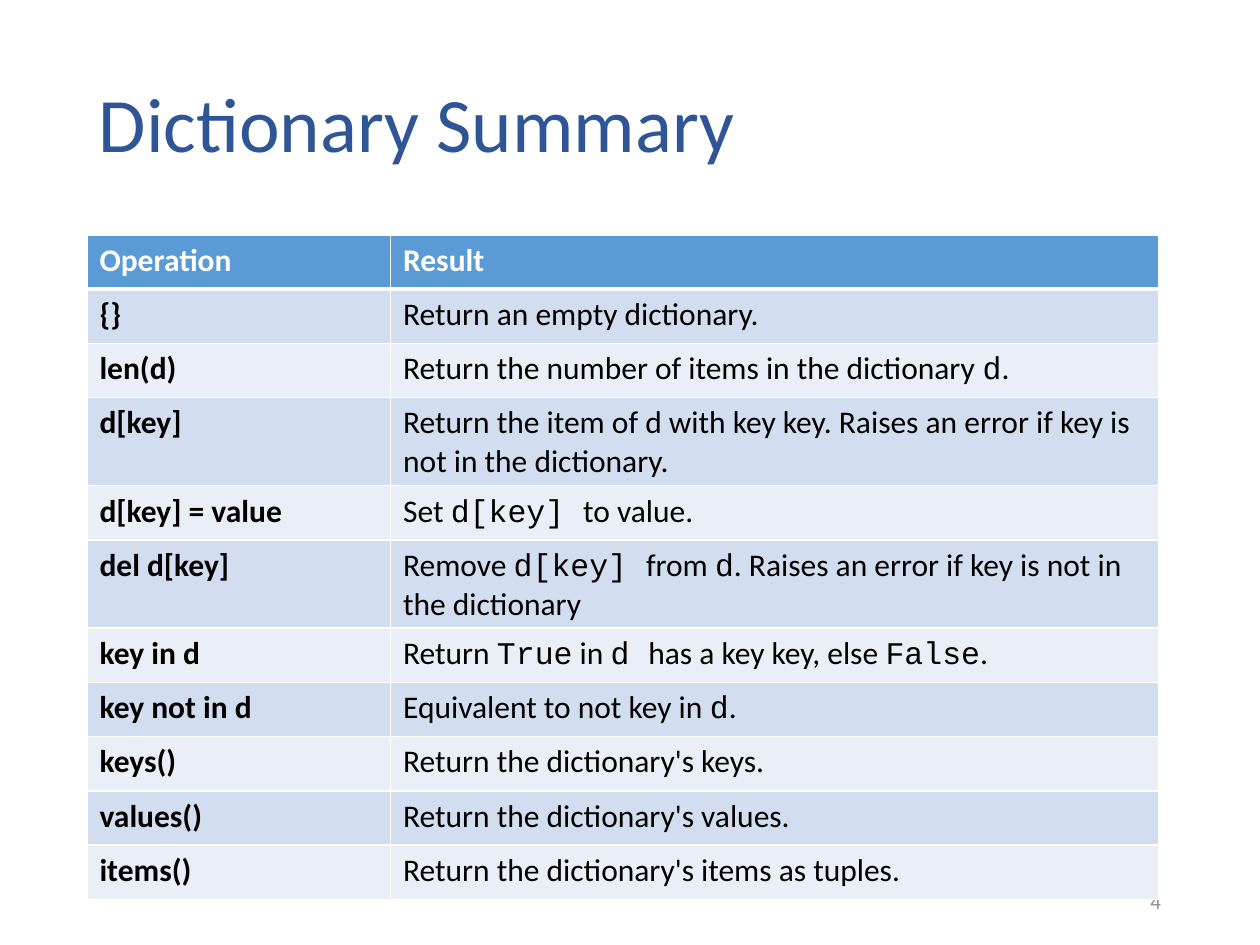
from lxml import etree
from pptx import Presentation
from pptx.dml.color import RGBColor
from pptx.enum.text import MSO_ANCHOR, PP_ALIGN
from pptx.oxml.ns import qn
from pptx.util import Pt

MIDDLE = MSO_ANCHOR.MIDDLE
LEFT, RIGHT = PP_ALIGN.LEFT, PP_ALIGN.RIGHT

WHITE = RGBColor(0xFF, 0xFF, 0xFF)
BLACK = RGBColor(0, 0, 0)
TITLE_BLUE = RGBColor(0x2F, 0x55, 0x97)
GRAY = RGBColor(0x8C, 0x8C, 0x8C)
HEADER_BLUE = RGBColor(0x5B, 0x9B, 0xD5)
BAND_DARK = RGBColor(0xD2, 0xDE, 0xEF)
BAND_LIGHT = RGBColor(0xEA, 0xEF, 0xF7)

BODY_FONT = "Calibri"
CODE_FONT = "Courier New"
COLUMN_WIDTHS = (173.5, 439.2)
ROW_HEIGHT = 31
THIN, THICK = 1, 3

# Text between backticks is set in the code font.
ROWS = [
    ("Operation", "Result"),
    ("{}", "Return an empty dictionary."),
    ("len(d)", "Return the number of items in the dictionary `d`."),
    ("d[key]", "Return the item of d with key key. Raises an error if key is "
               "not in the dictionary."),
    ("d[key] = value", "Set `d[key] `to value."),
    ("del d[key]", "Remove `d[key] `from `d`. Raises an error if key is not in "
                   "the dictionary"),
    ("key in d", "Return `True` in `d `has a key key, else `False`."),
    ("key not in d", "Equivalent to not key in `d`."),
    ("keys()", "Return the dictionary's keys."),
    ("values()", "Return the dictionary's values."),
    ("items()", "Return the dictionary's items as tuples."),
]


def add_runs(p, text, size, color, bold=False):
    """Add text to p, switching to the code font between backticks."""
    for i, part in enumerate(text.split("`")):
        if part:
            r = p.add_run()
            r.text = part
            r.font.name = CODE_FONT if i % 2 else BODY_FONT
            r.font.size = Pt(size)
            r.font.bold = bold
            r.font.color.rgb = color


def add_text(slide, box, text, size, color, align=LEFT, line_spacing=1.0):
    sp = slide.shapes.add_textbox(*map(Pt, box))
    tf = sp.text_frame
    tf.word_wrap = True
    tf.vertical_anchor = MIDDLE
    p = tf.paragraphs[0]
    p.alignment = align
    p.line_spacing = line_spacing
    add_runs(p, text, size, color)


def set_borders(cell, **widths):
    """Draw white borders; widths maps the sides L, R, T, B to points."""
    tc_pr = cell._tc.get_or_add_tcPr()
    for i, side in enumerate("LRTB"):
        ln = etree.Element(qn(f"a:ln{side}"), w=str(Pt(widths.get(side, THIN))))
        fill = etree.SubElement(ln, qn("a:solidFill"))
        etree.SubElement(fill, qn("a:srgbClr"), val=str(WHITE))
        tc_pr.insert(i, ln)


def fill_cell(cell, text, row, bold):
    band = BAND_DARK if row % 2 else BAND_LIGHT
    cell.fill.solid()
    cell.fill.fore_color.rgb = band if row else HEADER_BLUE
    add_runs(cell.text_frame.paragraphs[0], text, 18,
             BLACK if row else WHITE, bold)
    set_borders(cell, T=THICK if row == 1 else THIN,
                B=THICK if row == 0 else THIN)


def add_summary_table(slide, left, top):
    frame = slide.shapes.add_table(
        len(ROWS), len(COLUMN_WIDTHS), Pt(left), Pt(top),
        Pt(sum(COLUMN_WIDTHS)), Pt(ROW_HEIGHT * len(ROWS)))
    table = frame.table
    for column, width in zip(table.columns, COLUMN_WIDTHS):
        column.width = Pt(width)
    for i, texts in enumerate(ROWS):
        table.rows[i].height = Pt(ROW_HEIGHT)
        for j, text in enumerate(texts):
            fill_cell(table.cell(i, j), text, i, bold=i == 0 or j == 0)


def main():
    prs = Presentation()
    prs.slide_width, prs.slide_height = Pt(720), Pt(540)
    slide = prs.slides.add_slide(prs.slide_layouts[6])
    add_text(slide, (49.5, 28.75, 621, 88.5), "Dictionary Summary", 44,
             TITLE_BLUE, line_spacing=0.9)
    add_text(slide, (508.5, 500.5, 162, 28.75), "4", 12, GRAY, RIGHT)
    add_summary_table(slide, 49.7, 134.2)
    prs.save("out.pptx")


if __name__ == "__main__":
    main()
